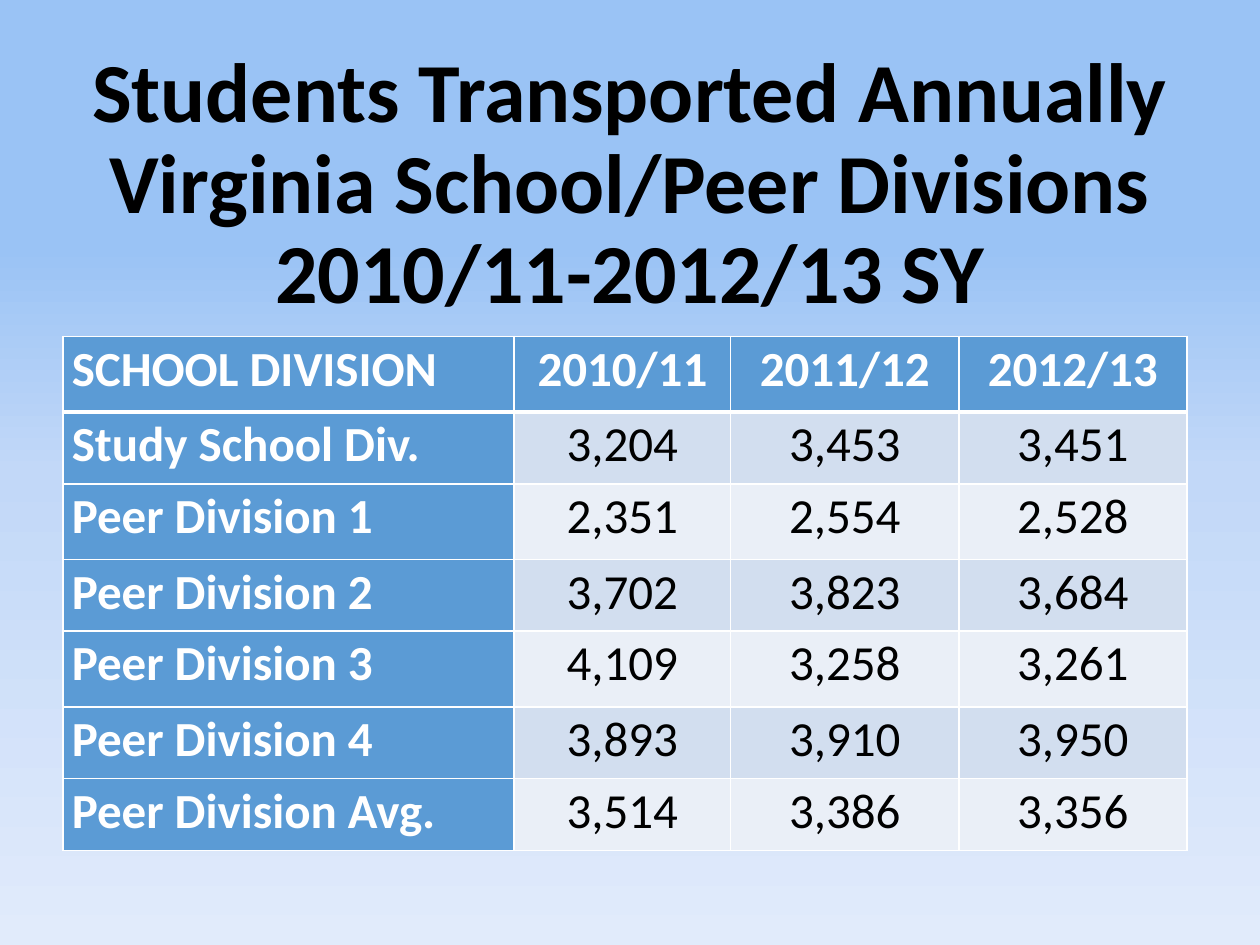
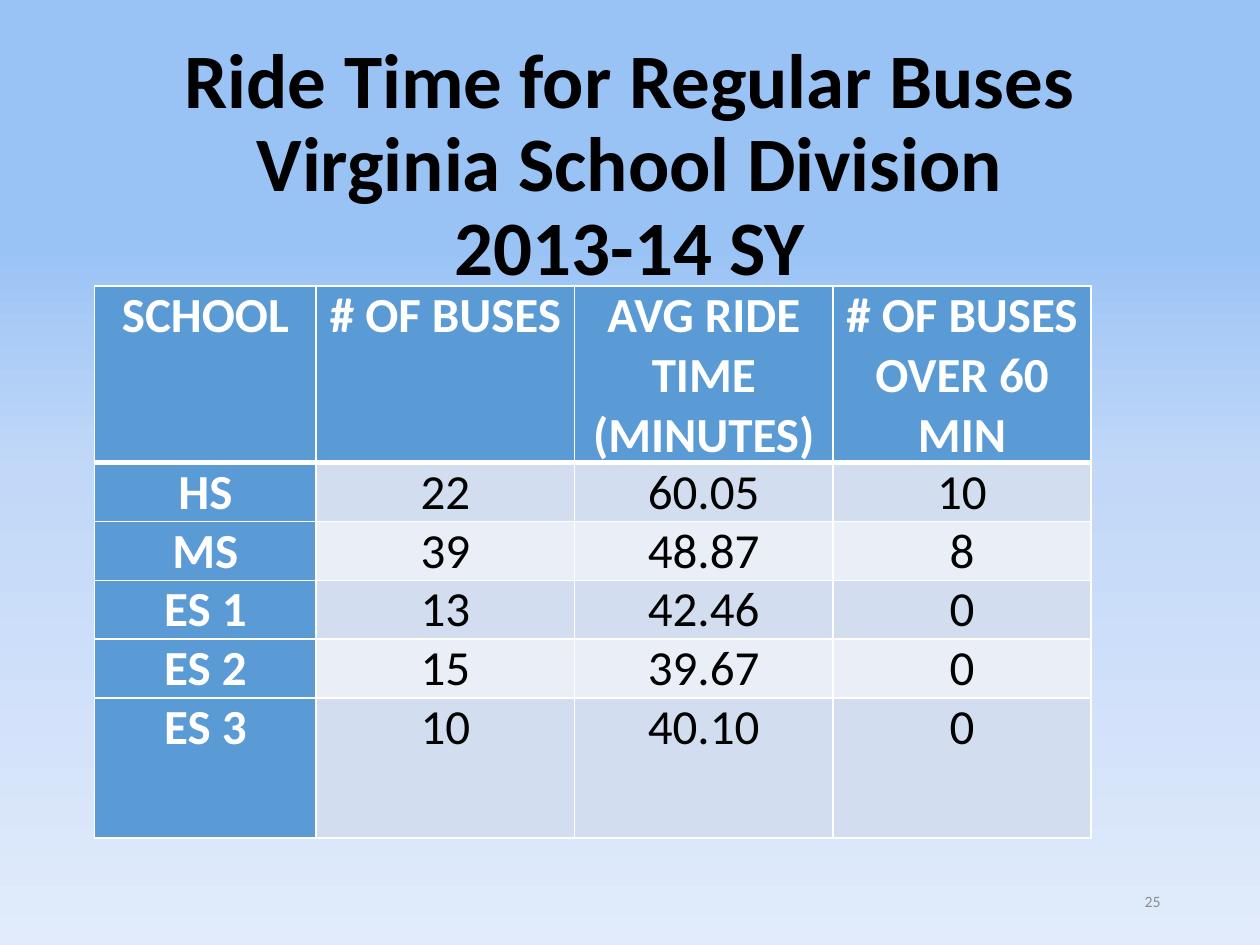
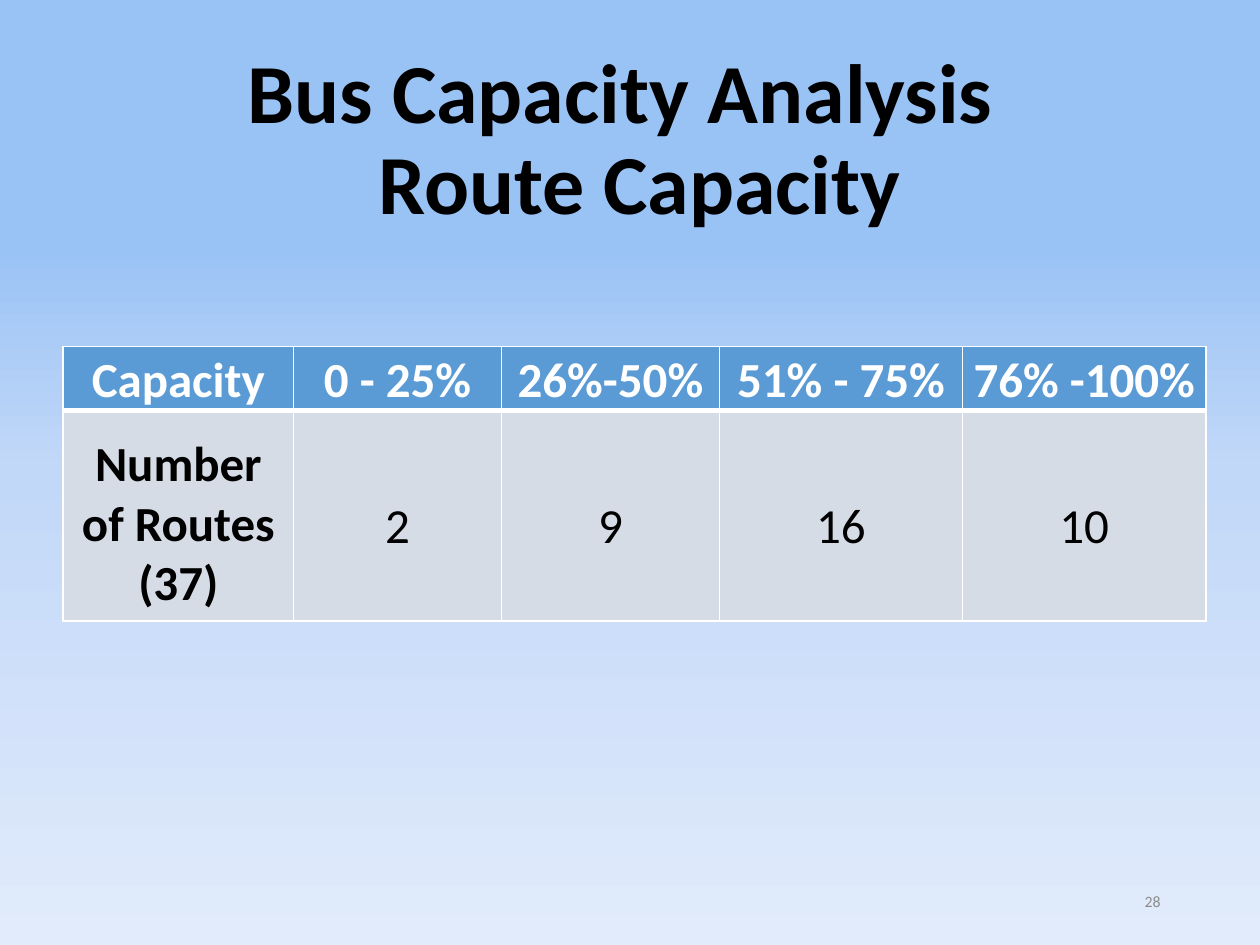
from lxml import etree
from pptx import Presentation
from pptx.dml.color import RGBColor
from pptx.enum.text import MSO_ANCHOR, MSO_AUTO_SIZE, PP_ALIGN
from pptx.oxml.ns import qn
from pptx.util import Pt

LEFT, CENTER, RIGHT = PP_ALIGN.LEFT, PP_ALIGN.CENTER, PP_ALIGN.RIGHT
MIDDLE, NO_FIT = MSO_ANCHOR.MIDDLE, MSO_AUTO_SIZE.NONE

# Shared style: 100 px to the inch
SCALE = 9144
FONT = "Calibri"
BLACK, WHITE, GREY = "000000", "FFFFFF", "8C8C8C"
BLUE, SILVER = "5B9BD5", "D6DCE5"
BANDS = ("D2DEEF", "EAEFF7")
BACKGROUND = ((26, "9AC3F5"), (50, "C2D8F8"), (100, "E1EBFB"))


def px(n):
    return n * SCALE


def color(value):
    return RGBColor.from_string(value)


def write(tf, text, size=28, c=BLACK, bold=False, align=CENTER, spacing=None):
    """Fill a text frame with one paragraph; a line feed is a line break."""
    p = tf.paragraphs[0]
    p.text = text.replace("\n", "\v")
    p.alignment = align
    if spacing:
        p.line_spacing = spacing
    for r in p.runs:
        r.font.name, r.font.size, r.font.bold = FONT, Pt(size), bold
        r.font.color.rgb = color(c)


def add_color(parent, value):
    etree.SubElement(parent, qn("a:srgbClr"), val=value)


def set_borders(cell, **widths):
    """Draw white cell borders; widths in points by side: L, R, T, B."""
    tc_pr = cell._tc.get_or_add_tcPr()
    for side in "LRTB":
        width = Pt(widths.get(side, 1))
        ln = etree.SubElement(tc_pr, qn("a:ln" + side), w=str(width))
        add_color(etree.SubElement(ln, qn("a:solidFill")), WHITE)


class Deck:
    def __init__(self):
        self.prs = Presentation()
        self.prs.slide_width, self.prs.slide_height = px(1000), px(750)
        self.layout = self.prs.slide_layouts.get_by_name("Title Only")
        self.s = None
        self.background()

    def background(self):
        master = self.prs.slide_master
        fill = master.background.fill
        fill.gradient()
        fill.gradient_angle = 270
        stops = master.element.find(".//" + qn("a:gsLst"))
        stops.clear()
        for position, value in BACKGROUND:
            add_color(etree.SubElement(stops, qn("a:gs"), pos=str(position * 1000)), value)

    def slide(self, title, x, y, w, h, size=48):
        self.s = self.prs.slides.add_slide(self.layout)
        sp = self.s.shapes.title
        sp.left, sp.top, sp.width, sp.height = map(px, (x, y, w, h))
        tf = sp.text_frame
        tf.word_wrap, tf.auto_size, tf.vertical_anchor = True, NO_FIT, MIDDLE
        write(tf, title, size=size, bold=True, spacing=0.9)

    def number(self, n):
        tf = self.s.shapes.add_textbox(px(706), px(695), px(225), px(40)).text_frame
        tf.word_wrap, tf.vertical_anchor = True, MIDDLE
        write(tf, str(n), size=9, c=GREY, align=RIGHT)

    def table(self, x, y, cols, rows, data, label_align=CENTER, spacing=None,
              label_fill=BLUE, label_color=WHITE, bands=BANDS, label_top=0, value_top=0,
              label_spacing=None):
        """Header row, label column and banded values; tops are body cell margins."""
        tbl = self.s.shapes.add_table(len(rows), len(cols), px(x), px(y),
                                      px(sum(cols)), px(sum(rows))).table
        for column, w in zip(tbl.columns, cols):
            column.width = px(w)
        for row, h in zip(tbl.rows, rows):
            row.height = px(h)
        for i, line in enumerate(data):
            for j, text in enumerate(line):
                cell, header, label = tbl.cell(i, j), i == 0, j == 0
                if header:
                    fill, c, top = BLUE, WHITE, 0
                elif label:
                    fill, c, top = label_fill, label_color, label_top
                else:
                    fill, c, top = bands[(i - 1) % len(bands)], BLACK, value_top
                cell.margin_left = cell.margin_right = px(7)
                cell.margin_top, cell.margin_bottom = px(top), 0
                set_borders(cell, T=3 if i == 1 else 1, B=3 if header else 1)
                cell.fill.solid()
                cell.fill.fore_color.rgb = color(fill)
                write(cell.text_frame, text, c=c, bold=header or label,
                      align=label_align if label else CENTER,
                      spacing=label_spacing if label and not header else spacing)


def main():
    deck = Deck()

    # Students transported
    deck.slide("Students Transported Annually\nVirginia School/Peer Divisions\n"
               "2010/11-2012/13 SY", 0, 75, 1000, 145)
    deck.table(50, 267, (358, 172, 181, 181), (60, 57, 60, 57, 60, 57, 57), (
        ("SCHOOL DIVISION", "2010/11", "2011/12", "2012/13"),
        ("Study School Div.", "3,204", "3,453", "3,451"),
        ("Peer Division 1", "2,351", "2,554", "2,528"),
        ("Peer Division 2", "3,702", "3,823", "3,684"),
        ("Peer Division 3", "4,109", "3,258", "3,261"),
        ("Peer Division 4", "3,893", "3,910", "3,950"),
        ("Peer Division Avg.", "3,514", "3,386", "3,356"),
    ), label_align=LEFT, spacing=1.05, label_spacing=1.05)

    # Ride time
    deck.slide("Ride Time for Regular Buses\nVirginia School Division\n2013-14 SY",
               69, 40, 862, 185, size=44)
    deck.number(25)
    deck.table(75, 227, (176, 205, 205, 205), (125, 43, 43, 43, 43, 111), (
        ("SCHOOL", "# OF BUSES", "AVG RIDE TIME (MINUTES)", "# OF BUSES OVER 60 MIN"),
        ("HS", "22", "60.05", "10"),
        ("MS", "39", "48.87", "8"),
        ("ES 1", "13", "42.46", "0"),
        ("ES 2", "15", "39.67", "0"),
        ("ES 3", "10", "40.10", "0"),
    ))

    # Route capacity
    deck.slide("Bus Capacity Analysis \n Route Capacity", 69, 40, 862, 145)
    deck.table(50, 275, (183, 165, 173, 193, 193), (41, 167), (
        ("Capacity", "0 - 25%", "26%-50%", "51% - 75%", "76% -100%"),
        ("Number of Routes (37)", "2", "9", "16", "10"),
    ), spacing=1.07, label_fill=SILVER, label_color=BLACK, bands=(SILVER,),
        label_top=19, value_top=65)
    deck.number(28)

    deck.prs.save("out.pptx")


if __name__ == "__main__":
    main()
